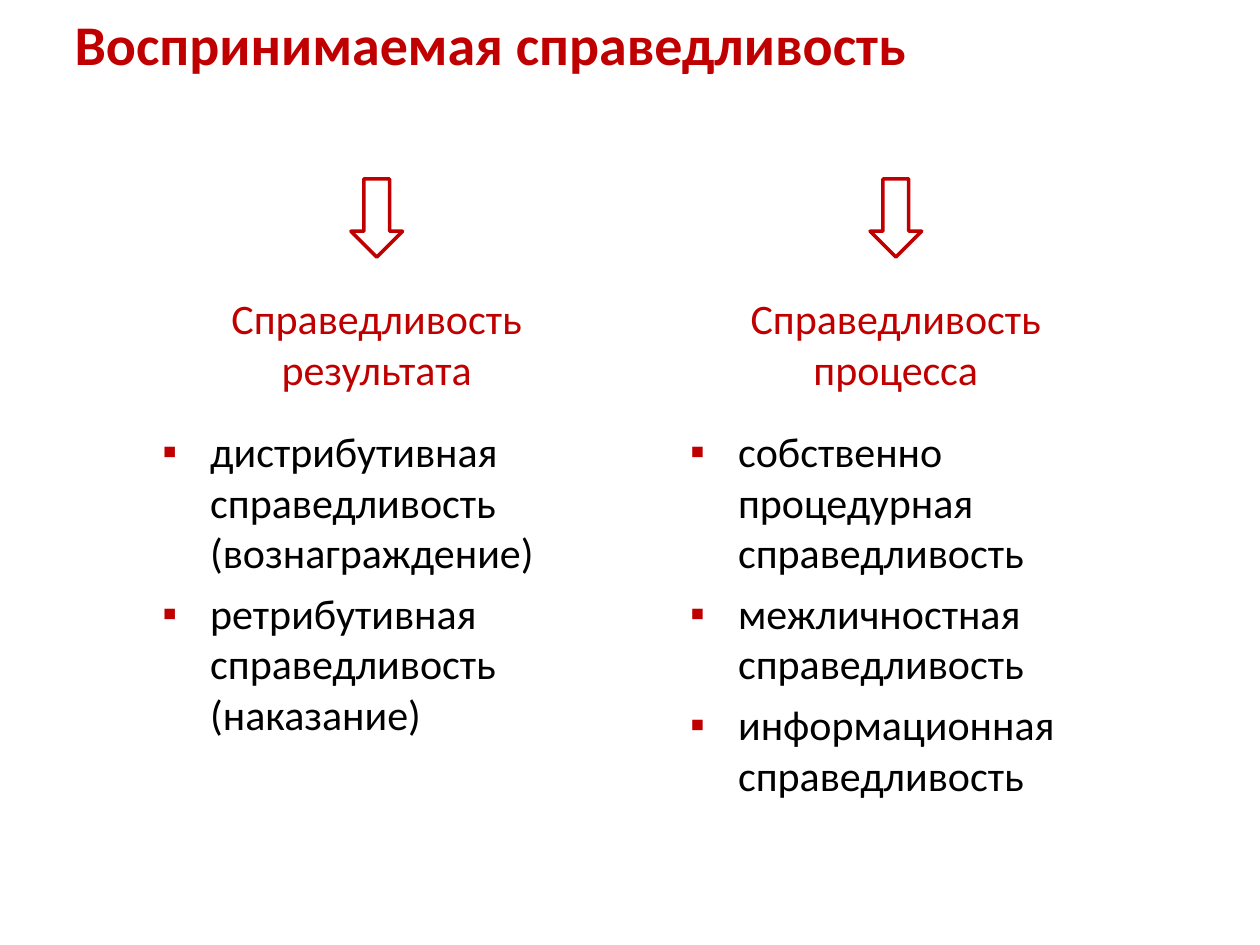
from lxml.etree import SubElement
from pptx import Presentation
from pptx.dml.color import RGBColor
from pptx.enum.shapes import MSO_SHAPE as Shape
from pptx.enum.text import MSO_ANCHOR as Anchor, PP_ALIGN as Align
from pptx.oxml.ns import qn
from pptx.util import Inches, Pt

RED, BLACK = "C00000", "000000"


def color(code):
    return RGBColor.from_string(code)


def write(box, *lines, size=24, ink=RED, bold=False, align=Align.CENTER,
          anchor=Anchor.MIDDLE, bullet=None):
    frame = box.text_frame
    frame.word_wrap = True
    frame.vertical_anchor = anchor
    for i, line in enumerate(lines):
        para = frame.add_paragraph() if i else frame.paragraphs[0]
        para.alignment = align
        run = para.add_run()
        run.text = line
        font = run.font
        font.name, font.size, font.bold = "Calibri", Pt(size), bold
        font.color.rgb = color(ink)
        if bullet:
            para.space_after = Pt(6)
            props = para._p.get_or_add_pPr()
            props.set("marL", str(Inches(0.38)))
            props.set("indent", str(-Inches(0.38)))
            tint = SubElement(props, qn("a:buClr"))
            SubElement(tint, qn("a:srgbClr"), val=RED)
            SubElement(props, qn("a:buFont"), typeface="Arial")
            SubElement(props, qn("a:buChar"), char=bullet)


deck = Presentation()
deck.slide_width, deck.slide_height = Inches(10), Inches(7.5)
slide = deck.slides.add_slide(deck.slide_layouts[5])
shapes = slide.shapes

title = shapes.title
title.left, title.top = Inches(0), Inches(0)
title.width, title.height = Inches(7.79), Inches(0.69)
write(title, "Воспринимаемая справедливость", size=32, bold=True)

# Heading left, list left, list height, heading, list items
columns = [
    (1.26, 1.19, 2.61, "Справедливость результата",
     ["дистрибутивная справедливость (вознаграждение)",
      "ретрибутивная справедливость (наказание)"]),
    (5.38, 5.38, 3.1, "Справедливость процесса",
     ["собственно процедурная справедливость",
      "межличностная справедливость",
      "информационная справедливость"]),
]
wide, slim = 3.46, 0.41

for left, edge, tall, head, items in columns:
    arrow = shapes.add_shape(Shape.DOWN_ARROW, Inches(left + (wide - slim) / 2),
                             Inches(1.42), Inches(slim), Inches(0.62))
    arrow.shadow.inherit = False
    arrow.fill.background()
    arrow.line.color.rgb = color(RED)
    arrow.line.width = Pt(2)

    label = shapes.add_textbox(Inches(left), Inches(2.25), Inches(wide), Inches(0.95))
    write(label, head)

    body = shapes.add_textbox(Inches(edge), Inches(3.33), Inches(wide), Inches(tall))
    write(body, *items, ink=BLACK, align=Align.LEFT, anchor=Anchor.TOP, bullet="▪")

deck.save("out.pptx")
